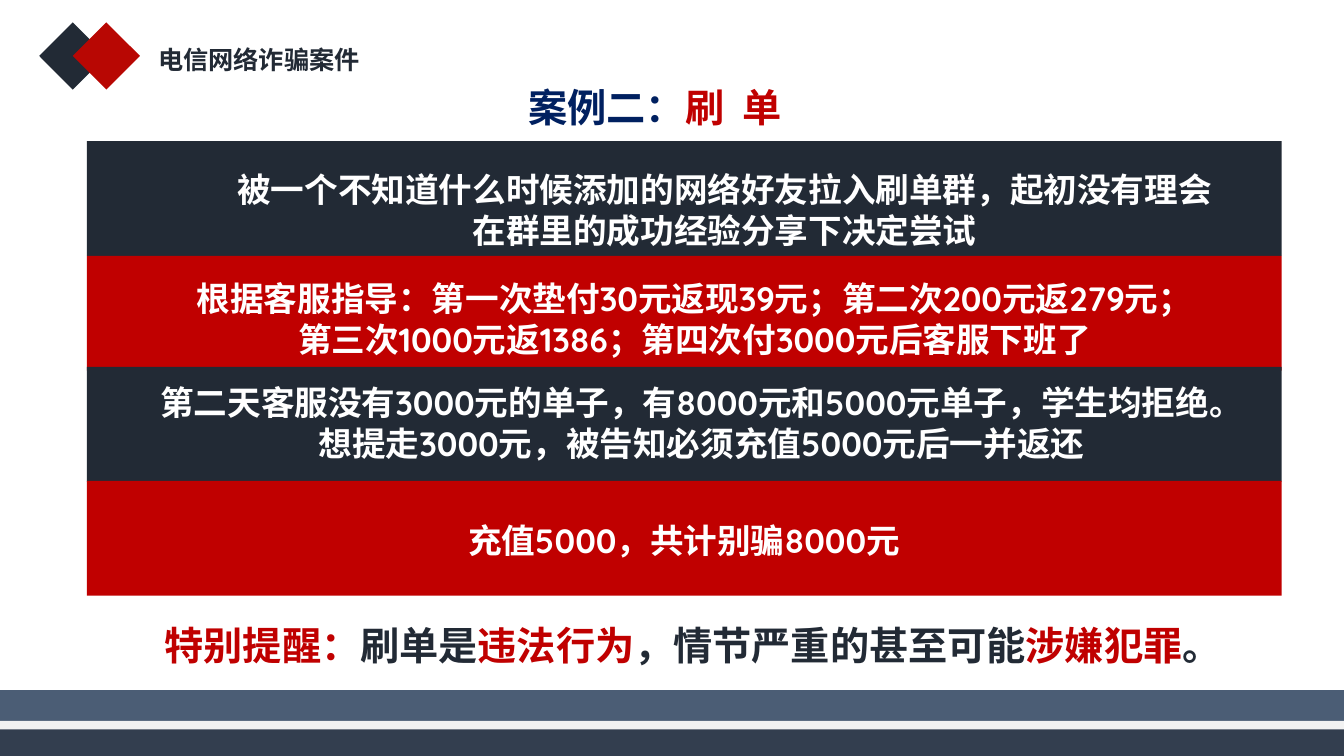
from lxml.etree import SubElement
from pptx import Presentation
from pptx.dml.color import RGBColor
from pptx.enum.shapes import MSO_SHAPE
from pptx.enum.text import MSO_ANCHOR, MSO_AUTO_SIZE, PP_ALIGN
from pptx.oxml.ns import qn
from pptx.util import Pt

COLORS = {
    "navy": "222A35", "red": "C00000", "logo_red": "B80703", "title": "002060",
    "white": "FFFFFF", "steel": "4B5D75", "pale": "F2F2F2", "slate": "333E4F",
}
CJK = "Noto Sans CJK SC"
LATIN = "Quicksand"


class SlideBuilder:
    def __init__(self, slide):
        self.slide = slide

    def shape(self, kind, x, y, w, h, color):
        sp = self.slide.shapes.add_shape(kind, Pt(x), Pt(y), Pt(w), Pt(h))
        sp.shadow.inherit = False
        sp.fill.solid()
        sp.fill.fore_color.rgb = RGBColor.from_string(COLORS[color])
        sp.line.fill.background()

    def title(self, x, y, w, h, *args, **style):
        sp = self.slide.shapes.title
        sp.left, sp.top, sp.width, sp.height = Pt(x), Pt(y), Pt(w), Pt(h)
        self.fill_text(sp.text_frame, *args, **style)

    def text(self, x, y, w, h, *args, **style):
        sp = self.slide.shapes.add_textbox(Pt(x), Pt(y), Pt(w), Pt(h))
        self.fill_text(sp.text_frame, *args, **style)

    def fill_text(self, tf, lines, size, align=PP_ALIGN.CENTER, latin=CJK):
        """Each line is a list of (text, color) pairs."""
        tf.margin_left = tf.margin_right = tf.margin_top = tf.margin_bottom = 0
        tf.word_wrap = True
        tf.auto_size = MSO_AUTO_SIZE.NONE
        tf.vertical_anchor = MSO_ANCHOR.TOP
        for i, line in enumerate(lines):
            p = tf.paragraphs[0] if i == 0 else tf.add_paragraph()
            p.alignment = align
            p.line_spacing = Pt(size * 1.2)
            p.space_before = p.space_after = Pt(0)
            for words, color in line:
                r = p.add_run()
                r.text = words
                r.font.size = Pt(size)
                r.font.bold = True
                r.font.name = latin
                r.font.color.rgb = RGBColor.from_string(COLORS[color])
                SubElement(r._r.get_or_add_rPr(), qn("a:ea"), typeface=CJK)


def main():
    prs = Presentation()
    prs.slide_width, prs.slide_height = Pt(960), Pt(540)
    s = SlideBuilder(prs.slides.add_slide(prs.slide_layouts[5]))

    # Header diamonds and section name
    s.shape(MSO_SHAPE.DIAMOND, 28, 16, 48, 48, "navy")
    s.shape(MSO_SHAPE.DIAMOND, 52, 16, 48, 48, "logo_red")
    s.text(105, 32, 160, 22, [[("电信网络诈骗案件", "navy")]], 18)

    # Footer stripes
    for y, h, color in [(493, 22, "steel"), (515, 6, "pale"), (521, 19, "slate")]:
        s.shape(MSO_SHAPE.RECTANGLE, 0, y, 960, h, color)

    # Title
    s.title(330, 59.5, 228, 34, [[("案例二：", "title"), ("刷  单", "red")]],
            28, align=PP_ALIGN.RIGHT)

    # Case steps: band top, color, text left, top, width, lines
    steps = [
        (100.8, "navy", 134.5, 121, 766,
         ["被一个不知道什么时候添加的网络好友拉入刷单群，起初没有理会",
          "在群里的成功经验分享下决定尝试"]),
        (182.8, "red", 75.5, 198.8, 841,
         ["根据客服指导：第一次垫付30元返现39元；第二次200元返279元；",
          "第三次1000元返1386；第四次付3000元后客服下班了"]),
        (262, "navy", 86.5, 273, 829,
         ["第二天客服没有3000元的单子，有8000元和5000元单子，学生均拒绝。",
          "想提走3000元，被告知必须充值5000元后一并返还"]),
        (343.5, "red", 75.5, 371.5, 826,
         ["充值5000，共计别骗8000元"]),
    ]
    for band_y, color, x, y, w, lines in steps:
        s.shape(MSO_SHAPE.RECTANGLE, 62, band_y, 853.5, 82, color)
        s.text(x, y, w, 29 * len(lines), [[(line, "white")] for line in lines],
               24, latin=LATIN)

    # Closing reminder
    reminder = [("特别提醒：", "red"), ("刷单是", "navy"), ("违法行为", "red"),
                ("，情节严重的甚至可能", "navy"), ("涉嫌犯罪", "red"), ("。", "navy")]
    s.text(92, 444, 780.5, 36, [reminder], 28, align=PP_ALIGN.RIGHT)

    prs.save("out.pptx")


if __name__ == "__main__":
    main()
